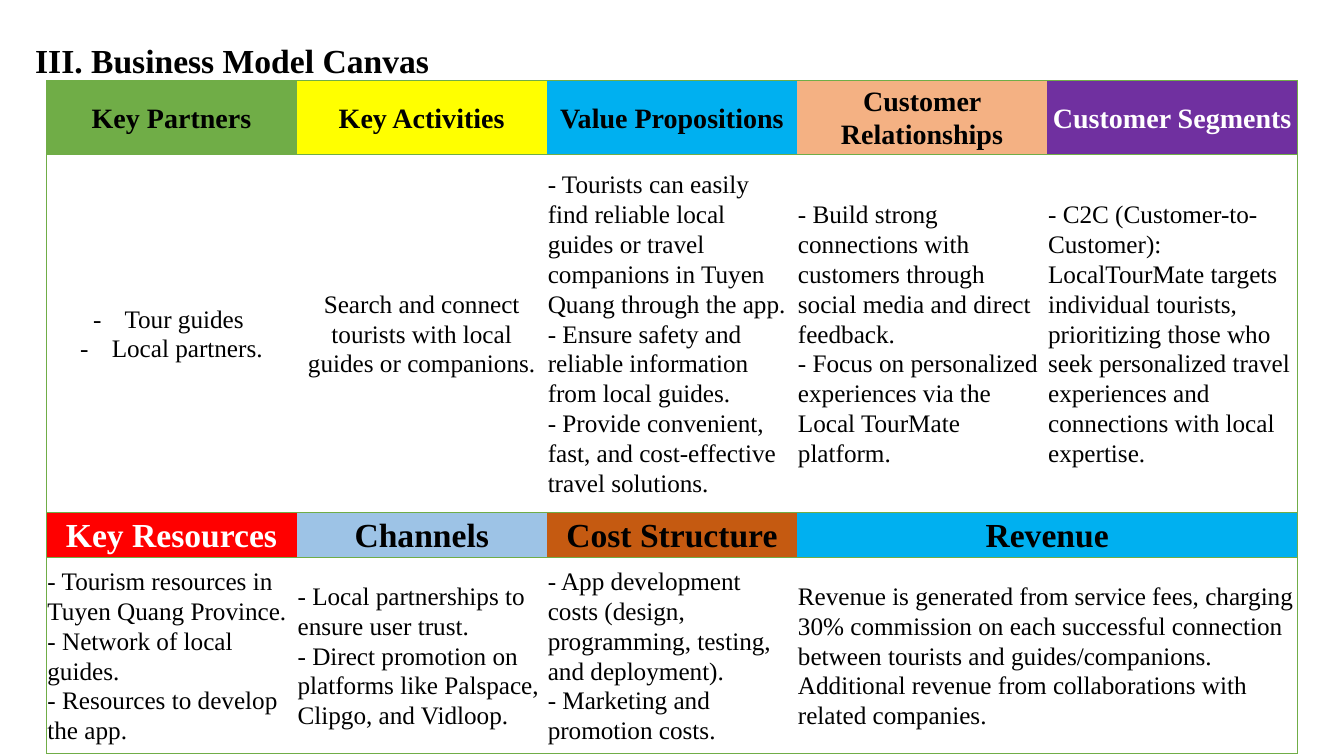
"""Build the Business Model Canvas slide."""
from lxml import etree
from pptx import Presentation
from pptx.dml.color import RGBColor
from pptx.enum.text import MSO_ANCHOR as Anchor, MSO_AUTO_SIZE as AutoSize, PP_ALIGN as Align
from pptx.oxml.ns import qn
from pptx.util import Pt

FONT = "Times New Roman"
COLORS = {
    "black": "000000", "white": "FFFFFF", "green": "70AD47", "yellow": "FFFF00",
    "sky": "00B0F0", "peach": "F4B183", "purple": "7030A0", "red": "FF0000",
    "pale_blue": "9DC3E6", "rust": "C55A11",
}
TITLE = "III. Business Model Canvas"
TOP_HEADS = [
    ("Key Partners", "green", "black"),
    ("Key Activities", "yellow", "black"),
    ("Value Propositions", "sky", "black"),
    ("Customer Relationships", "peach", "black"),
    ("Customer Segments", "purple", "white"),
]
PARTNERS = ["Tour guides ", "Local partners."]
ACTIVITIES = ["Search and connect tourists with local guides or companions."]
TOP_BODIES = [
    (PARTNERS, "bullets"),
    (ACTIVITIES, "center"),
    (["- Tourists can easily find reliable local guides or travel companions in Tuyen Quang "
      "through the app. \n- Ensure safety and reliable information from local guides. \n"
      "- Provide convenient, fast, and cost-effective travel solutions."], "left"),
    (["- Build strong connections with customers through social media and direct feedback. \n"
      "- Focus on personalized experiences via the Local TourMate platform."], "left"),
    (["- C2C (Customer-to-Customer): LocalTourMate targets individual tourists, prioritizing "
      "those who seek personalized travel experiences and connections with local expertise."],
     "left"),
]
LOW_HEADS = [
    ("Key Resources", "red", "white"),
    ("Channels", "pale_blue", "black"),
    ("Cost Structure", "rust", "black"),
    ("Revenue", "sky", "black"),
]
LOW_BODIES = [
    (["- Tourism resources in Tuyen Quang Province. \n- Network of local guides. \n"
      "- Resources to develop the app."], "left"),
    (["- Local partnerships to ensure user trust. \n- Direct promotion on platforms like "
      "Palspace, Clipgo, and Vidloop."], "left"),
    (["- App development costs (design, programming, testing, and deployment). \n"
      "- Marketing and promotion costs."], "left"),
    (["Revenue is generated from service fees, charging 30% commission on each successful "
      "connection between tourists and guides/companions. Additional revenue from "
      "collaborations with related companies."], "left"),
]
COLS, COL_W = 5, 178.7
ROW_H = [52.9, 255.7, 32.1, 139.6]
LEFT, TOP = 33.2, 57.5
INSET, INDENT = 0.7, 22.5


def rgb(name):
    """Return the named colour."""
    return RGBColor.from_string(COLORS[name])


def style_runs(p, size, color, bold):
    """Format every run of a paragraph."""
    for r in p.runs:
        r.font.name, r.font.size, r.font.bold = FONT, Pt(size), bold
        r.font.color.rgb = rgb(color)


def add_dash(p):
    """Give a paragraph a hanging dash bullet."""
    pPr = p._p.get_or_add_pPr()
    pPr.set("marL", str(Pt(INDENT)))
    pPr.set("indent", str(-Pt(INDENT)))
    etree.SubElement(pPr, qn("a:buFont")).set("typeface", FONT)
    etree.SubElement(pPr, qn("a:buChar")).set("char", "-")


def set_borders(cell, col):
    """Draw horizontal rules and the outer sides of the table."""
    shown = {"lnL": col == 0, "lnR": col + cell.span_width == COLS, "lnT": True, "lnB": True}
    tcPr = cell._tc.get_or_add_tcPr()
    for i, (side, visible) in enumerate(shown.items()):
        ln = etree.Element(qn(f"a:{side}"), w=str(Pt(0.5)))
        tcPr.insert(i, ln)
        if visible:
            fill = etree.SubElement(ln, qn("a:solidFill"))
            etree.SubElement(fill, qn("a:srgbClr")).set("val", COLORS["green"])
        else:
            etree.SubElement(ln, qn("a:noFill"))


def fill_cell(cell, paragraphs, layout, size, color, bold):
    """Write the paragraphs of one cell."""
    tf = cell.text_frame
    for i, text in enumerate(paragraphs):
        p = tf.add_paragraph() if i else tf.paragraphs[0]
        p.text = text
        p.alignment = Align.LEFT if layout == "left" else Align.CENTER
        p.line_spacing = 1.07
        if layout == "bullets":
            add_dash(p)
        style_runs(p, size, color, bold)


def add_title(s):
    """Add the slide heading."""
    tf = s.shapes.add_textbox(Pt(18), Pt(10.8), Pt(298.8), Pt(46)).text_frame
    tf.word_wrap = False
    tf.auto_size = AutoSize.SHAPE_TO_FIT_TEXT
    tf.text = TITLE
    p = tf.paragraphs[0]
    p.alignment, p.line_spacing = Align.JUSTIFY, 1.5
    style_runs(p, 24, "black", True)


def add_canvas(s):
    """Add the business model table."""
    table = s.shapes.add_table(len(ROW_H), COLS, Pt(LEFT), Pt(TOP),
                               Pt(COLS * COL_W), Pt(sum(ROW_H))).table
    table.first_row = table.horz_banding = False
    for column in table.columns:
        column.width = Pt(COL_W)
    for row, height in zip(table.rows, ROW_H):
        row.height = Pt(height)
    for row in (2, 3):
        table.cell(row, 3).merge(table.cell(row, 4))
    for row in range(len(ROW_H)):
        for col in range(COLS):
            cell = table.cell(row, col)
            cell.vertical_anchor = Anchor.MIDDLE
            cell.margin_left = cell.margin_right = Pt(INSET)
            cell.margin_top = cell.margin_bottom = Pt(INSET)
            cell.fill.background()
            set_borders(cell, col)
    for row, heads, size in ((0, TOP_HEADS, 20), (2, LOW_HEADS, 24)):
        for col, (text, fill, color) in enumerate(heads):
            cell = table.cell(row, col)
            cell.fill.solid()
            cell.fill.fore_color.rgb = rgb(fill)
            fill_cell(cell, [text], "center", size, color, True)
    for row, bodies in ((1, TOP_BODIES), (3, LOW_BODIES)):
        for col, (paragraphs, layout) in enumerate(bodies):
            fill_cell(table.cell(row, col), paragraphs, layout, 18, "black", False)


def main():
    """Create and save the presentation."""
    prs = Presentation()
    prs.slide_width, prs.slide_height = Pt(960), Pt(540)
    s = prs.slides.add_slide(prs.slide_layouts[6])
    add_title(s)
    add_canvas(s)
    prs.save("out.pptx")


if __name__ == "__main__":
    main()
